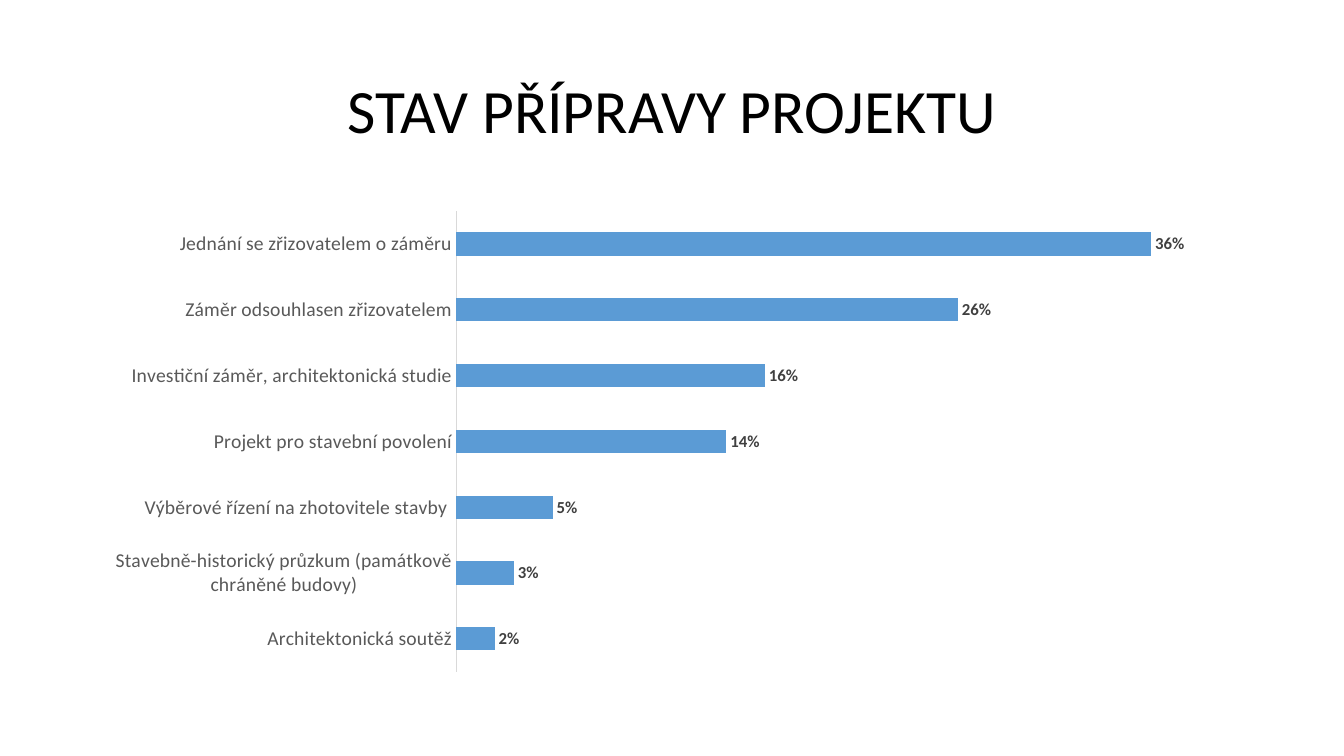
from pptx import Presentation
from pptx.chart.data import CategoryChartData as Data
from pptx.dml.color import RGBColor as Rgb
from pptx.enum.chart import XL_CHART_TYPE as Kind, XL_LABEL_POSITION as Spot, XL_TICK_MARK as Tick
from pptx.enum.text import MSO_ANCHOR as Anchor, PP_ALIGN as Align
from pptx.util import Cm, Pt

FONT = "Calibri"
HUES = {"title": "000000", "bar": "5B9BD5", "axis": "D9D9D9", "name": "595959", "label": "404040"}
STAGES = {
    "Jednání se zřizovatelem o záměru": 0.36,
    "Záměr odsouhlasen zřizovatelem": 0.26,
    "Investiční záměr, architektonická studie": 0.16,
    "Projekt pro stavební povolení": 0.14,
    "Výběrové řízení na zhotovitele stavby ": 0.05,
    "Stavebně-historický průzkum (památkově chráněné budovy)": 0.03,
    "Architektonická soutěž": 0.02,
}


def hue(key):
    return Rgb.from_string(HUES[key])


def style(font, size, key, bold=False):
    font.name, font.size, font.bold = FONT, Pt(size), bold
    font.color.rgb = hue(key)


def add_title(slide, text, box):
    title = slide.shapes.title
    title.left, title.top, title.width, title.height = box
    frame = title.text_frame
    frame.text = text
    frame.word_wrap = True
    frame.vertical_anchor = Anchor.MIDDLE
    line = frame.paragraphs[0]
    line.alignment = Align.CENTER
    line.line_spacing = 0.9
    style(line.runs[0].font, 44, "title")


def add_bars(slide, stages, box):
    data = Data(number_format="0%")
    data.categories = list(stages)
    data.add_series("Series 1", list(stages.values()))
    chart = slide.shapes.add_chart(Kind.BAR_CLUSTERED, *box, data).chart
    chart.has_legend = chart.has_title = False
    style(chart.font, 10, "title")

    names = chart.category_axis
    names.reverse_order = True
    names.has_major_gridlines = False
    names.major_tick_mark = names.minor_tick_mark = Tick.NONE
    names.format.line.color.rgb = hue("axis")
    names.format.line.width = Pt(0.75)
    style(names.tick_labels.font, 14, "name")

    scale = chart.value_axis
    scale.visible = scale.has_major_gridlines = False
    scale.minimum_scale, scale.maximum_scale = 0, 0.4

    plot = chart.plots[0]
    plot.gap_width = 182
    plot.vary_by_categories = False
    fill = plot.series[0].format.fill
    fill.solid()
    fill.fore_color.rgb = hue("bar")

    plot.has_data_labels = True
    labels = plot.data_labels
    labels.show_value = True
    labels.number_format = "0%"
    labels.number_format_is_linked = False
    labels.position = Spot.OUTSIDE_END
    style(labels.font, 12, "label", True)


def main():
    deck = Presentation()
    deck.slide_width, deck.slide_height = Cm(33.87), Cm(19.05)
    slide = deck.slides.add_slide(deck.slide_layouts[5])
    left, width = Cm(2.33), Cm(29.21)
    add_title(slide, "STAV PŘÍPRAVY PROJEKTU", (left, Cm(1.02), width, Cm(3.68)))
    add_bars(slide, STAGES, (left, Cm(5.08), width, Cm(12.09)))
    deck.save("out.pptx")


if __name__ == "__main__":
    main()
